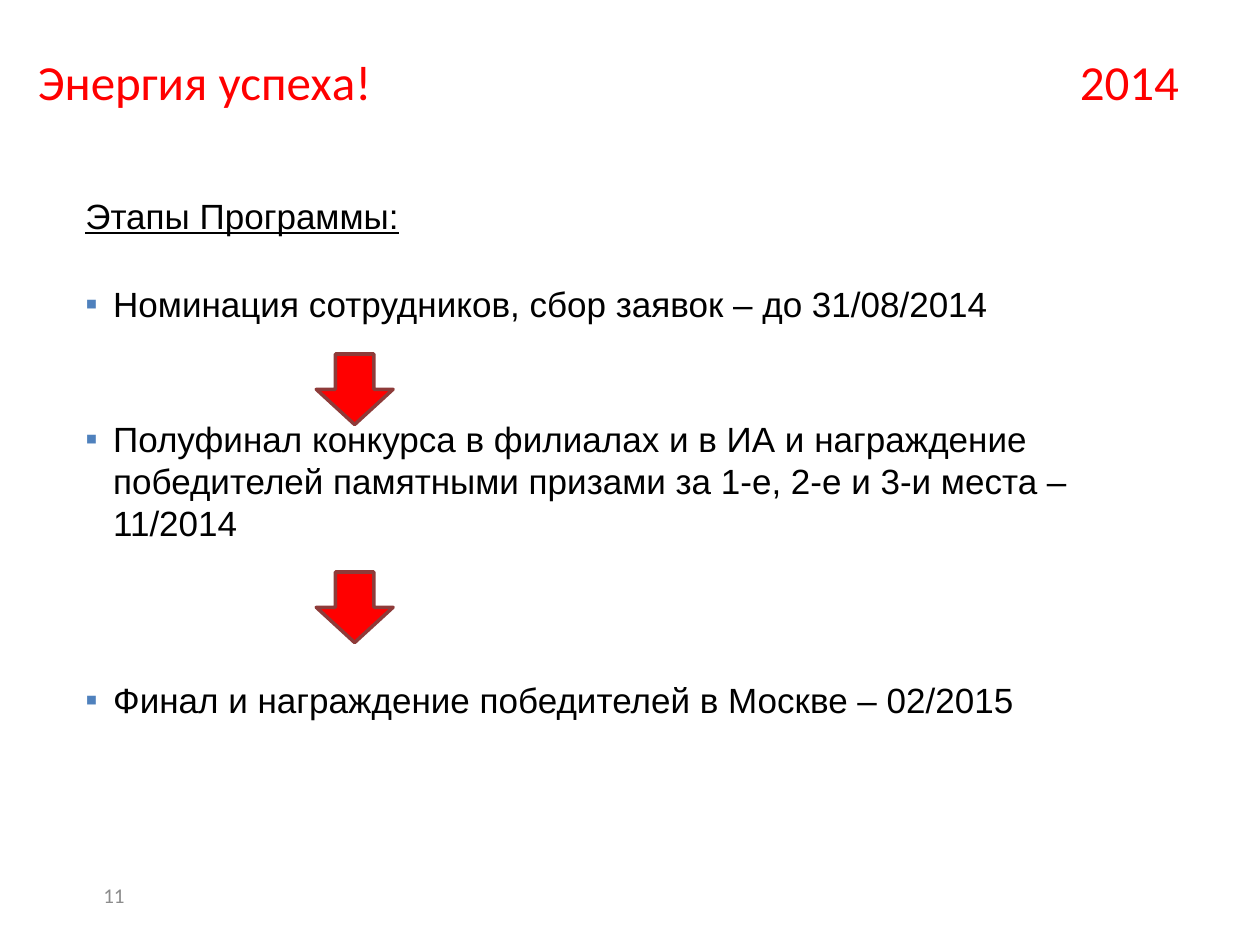
from dataclasses import dataclass
from typing import Any

from lxml import etree
from pptx import Presentation
from pptx.dml.color import RGBColor
from pptx.enum.shapes import MSO_SHAPE
from pptx.enum.text import MSO_ANCHOR, MSO_AUTO_SIZE, PP_ALIGN
from pptx.oxml.ns import qn
from pptx.util import Inches, Pt

DOWN_ARROW = MSO_SHAPE.DOWN_ARROW
TOP, MIDDLE = MSO_ANCHOR.TOP, MSO_ANCHOR.MIDDLE
LEFT, CENTER = PP_ALIGN.LEFT, PP_ALIGN.CENTER
NO_FIT = MSO_AUTO_SIZE.NONE

WIDTH, HEIGHT = Inches(10), Inches(7.5)
COLUMN, ROW = WIDTH / 100, HEIGHT / 75
RED, BLACK, GRAY, BLUE, MAROON = "FF0000", "000000", "8C8C8C", "4F81BD", "8E3B39"


@dataclass(frozen=True)
class Area:
    column: float
    row: float
    columns: float
    rows: float


@dataclass(frozen=True)
class Stage:
    text: str
    gap: float
    bulleted: bool = True


STAGES = (
    Stage("Этапы Программы:", 0, bulleted=False),
    Stage("Номинация сотрудников, сбор заявок – до 31/08/2014", 26.5),
    Stage("Полуфинал конкурса в филиалах и в ИА и награждение победителей "
          "памятными призами за 1-е, 2-е и 3-и места –11/2014", 53),
    Stage("Финал и награждение победителей в Москве – 02/2015", 77),
)
TITLE_AREA = Area(2, 3.6, 96.5, 10.4)
STAGES_AREA = Area(2, 11.5, 91.4, 56.5)
NUMBER_AREA = Area(6.7, 70, 4.7, 2.1)
ARROW_AREAS = [Area(25.1, row, 6.1, 5.6) for row in (28.1, 45.4)]


def color(value: str) -> RGBColor:
    return RGBColor.from_string(value)


def apply(target: Any, values: dict[str, Any]) -> None:
    for name, value in values.items():
        setattr(target, name, value)


def bounds(area: Area) -> dict[str, int]:
    return {"left": round(area.column * COLUMN), "top": round(area.row * ROW),
            "width": round(area.columns * COLUMN), "height": round(area.rows * ROW)}


def set_frame(frame: Any, anchor: Any, side: float, top: float) -> None:
    apply(frame, {"word_wrap": True, "auto_size": NO_FIT, "vertical_anchor": anchor,
                  "margin_left": Inches(side), "margin_right": Inches(side),
                  "margin_top": Inches(top), "margin_bottom": Inches(0)})


def write(paragraph: Any, text: str, font: str, size: float, ink: str,
          underline: bool = False) -> None:
    run = paragraph.add_run()
    run.text = text
    apply(run.font, {"name": font, "size": Pt(size), "underline": underline})
    run.font.color.rgb = color(ink)


def add_property(parent: Any, tag: str, **values: Any) -> Any:
    return etree.SubElement(parent, qn(tag), {k: str(v) for k, v in values.items()})


def add_title(slide: Any) -> None:
    title = slide.shapes.title
    apply(title, bounds(TITLE_AREA))
    set_frame(title.text_frame, TOP, 0.1, 0.05)
    heading = title.text_frame.paragraphs[0]
    heading.alignment = LEFT
    write(heading, "Энергия успеха!\t2014", "Calibri", 28, RED)
    tabs = add_property(heading._p.get_or_add_pPr(), "a:tabLst")
    add_property(tabs, "a:tab", pos=Inches(8.27), algn="l")


def add_stages(slide: Any) -> None:
    frame = slide.shapes.add_textbox(**bounds(STAGES_AREA)).text_frame
    set_frame(frame, TOP, 0.1, 0.39)
    for index, stage in enumerate(STAGES):
        paragraph = frame.add_paragraph() if index else frame.paragraphs[0]
        apply(paragraph, {"line_spacing": Pt(24), "space_before": Pt(stage.gap)})
        properties = paragraph._p.get_or_add_pPr()
        properties.set("marL", str(Inches(0.6 if stage.bulleted else 0.38)))
        properties.set("indent", str(Inches(-0.22 if stage.bulleted else 0)))
        if stage.bulleted:
            add_property(add_property(properties, "a:buClr"), "a:srgbClr", val=BLUE)
            add_property(properties, "a:buFont", typeface="Arial")
            add_property(properties, "a:buChar", char="▪")
        write(paragraph, stage.text, "Arial", 20, BLACK, underline=not stage.bulleted)


def add_number(slide: Any) -> None:
    frame = slide.shapes.add_textbox(**bounds(NUMBER_AREA)).text_frame
    set_frame(frame, MIDDLE, 0, 0)
    frame.paragraphs[0].alignment = CENTER
    write(frame.paragraphs[0], "11", "Calibri", 12, GRAY)


def add_arrow(slide: Any, area: Area) -> None:
    arrow = slide.shapes.add_shape(DOWN_ARROW, **bounds(area))
    arrow.shadow.inherit = False
    arrow.fill.solid()
    arrow.fill.fore_color.rgb = color(RED)
    arrow.line.color.rgb = color(MAROON)
    arrow.line.width = Pt(2)


def main() -> None:
    deck = Presentation()
    apply(deck, {"slide_width": WIDTH, "slide_height": HEIGHT})
    slide = deck.slides.add_slide(deck.slide_layouts[5])
    add_stages(slide)
    add_title(slide)
    add_number(slide)
    for area in ARROW_AREAS:
        add_arrow(slide, area)
    deck.save("out.pptx")


if __name__ == "__main__":
    main()
